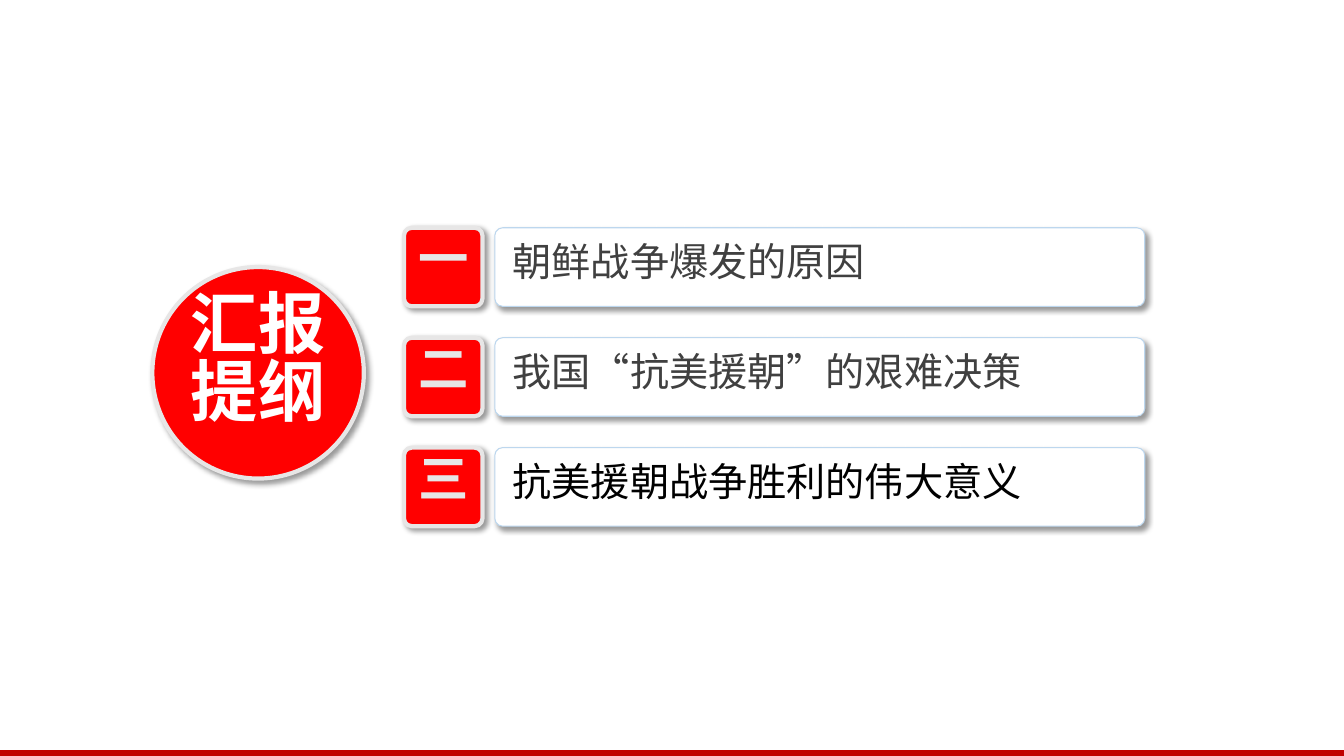
from dataclasses import dataclass

from lxml.etree import SubElement
from pptx import Presentation
from pptx.dml.color import RGBColor
from pptx.enum.shapes import MSO_SHAPE
from pptx.enum.text import MSO_ANCHOR, MSO_AUTO_SIZE, PP_ALIGN
from pptx.oxml.ns import qn
from pptx.shapes.autoshape import Shape
from pptx.slide import Slide
from pptx.util import Cm, Pt

FONT = "Noto Sans CJK SC"
RED, WHITE, GREY = "FF0000", "FFFFFF", "E7E6E6"
TOP, PITCH, SIDE = 5.74, 2.77, 1.98


@dataclass
class Box:
    left: float
    top: float
    width: float
    height: float

    def size(self) -> tuple:
        return Cm(self.left), Cm(self.top), Cm(self.width), Cm(self.height)


@dataclass
class Style:
    size: int
    color: str
    bold: bool = False
    align: PP_ALIGN = PP_ALIGN.LEFT
    wrap: bool = True


@dataclass
class Topic:
    mark: str
    text: str
    color: str


TOPICS = [
    Topic("一", "朝鲜战争爆发的原因", "404040"),
    Topic("二", "我国“抗美援朝”的艰难决策", "404040"),
    Topic("三", "抗美援朝战争胜利的伟大意义", "000000"),
]


def rgb(value: str) -> RGBColor:
    return RGBColor.from_string(value)


def add_form(slide: Slide, kind: MSO_SHAPE, box: Box, fill: str) -> Shape:
    form = slide.shapes.add_shape(kind, *box.size())
    form.shadow.inherit = False
    form.fill.solid()
    form.fill.fore_color.rgb = rgb(fill)
    form.line.fill.background()
    return form


def add_panel(slide: Slide, kind: MSO_SHAPE, box: Box, fill: str,
              edge: str, weight: float) -> Shape:
    panel = add_form(slide, kind, box, fill)
    panel.line.color.rgb = rgb(edge)
    panel.line.width = Pt(weight)
    effects = panel.element.spPr.find(qn("a:effectLst"))
    shade = SubElement(effects, qn("a:outerShdw"), blurRad=str(Pt(4)),
                       dist=str(Pt(3)), dir="2700000", algn="tl", rotWithShape="0")
    color = SubElement(shade, qn("a:srgbClr"), val="000000")
    SubElement(color, qn("a:alpha"), val="40000")
    return panel


def set_text(shape: Shape, text: str, style: Style) -> None:
    frame = shape.text_frame
    frame.text = text
    frame.word_wrap = style.wrap
    frame.auto_size = MSO_AUTO_SIZE.SHAPE_TO_FIT_TEXT
    frame.vertical_anchor = MSO_ANCHOR.TOP
    para = frame.paragraphs[0]
    para.alignment = style.align
    para.line_spacing = 0.84
    font = para.font
    font.name = FONT
    font.size = Pt(style.size)
    font.bold = style.bold
    font.color.rgb = rgb(style.color)
    props = para._p.pPr.find(qn("a:defRPr"))
    SubElement(props, qn("a:ea"), typeface=FONT)


def add_text(slide: Slide, box: Box, text: str, style: Style) -> None:
    set_text(slide.shapes.add_textbox(*box.size()), text, style)


def add_topic(slide: Slide, topic: Topic, top: float) -> None:
    panels = [
        (Box(10.18, top, SIDE, SIDE), RED, GREY, 3),
        (Box(12.47, top, 16.38, SIDE), WHITE, "BDD7EE", 0.75),
    ]
    for box, fill, edge, weight in panels:
        panel = add_panel(slide, MSO_SHAPE.ROUNDED_RECTANGLE, box, fill, edge, weight)
        panel.adjustments[0] = 0.1
    add_text(slide, Box(12.67, top + 0.3, 15.98, 1.45), topic.text,
             Style(28, topic.color))
    add_text(slide, Box(10.27, top + 0.1, 1.8, 1.8), topic.mark,
             Style(36, GREY, True, PP_ALIGN.CENTER, False))


def add_title(slide: Slide) -> None:
    add_panel(slide, MSO_SHAPE.OVAL, Box(3.84, 6.73, 5.33, 5.33), RED, GREY, 3)
    title = slide.shapes.title
    title.left, title.top, title.width, title.height = Box(4.04, 7.3, 4.93, 4.37).size()
    set_text(title, "汇报提纲", Style(48, WHITE, True, PP_ALIGN.CENTER))
    slide.shapes.element.append(title.element)


def main() -> None:
    deck = Presentation()
    deck.slide_width, deck.slide_height = Cm(33.87), Cm(19.05)
    slide = deck.slides.add_slide(deck.slide_layouts[5])
    add_form(slide, MSO_SHAPE.RECTANGLE, Box(0, 18.9, 33.87, 0.15), "C00000")
    for row, topic in enumerate(TOPICS):
        add_topic(slide, topic, TOP + row * PITCH)
    add_title(slide)
    deck.save("out.pptx")


if __name__ == "__main__":
    main()
